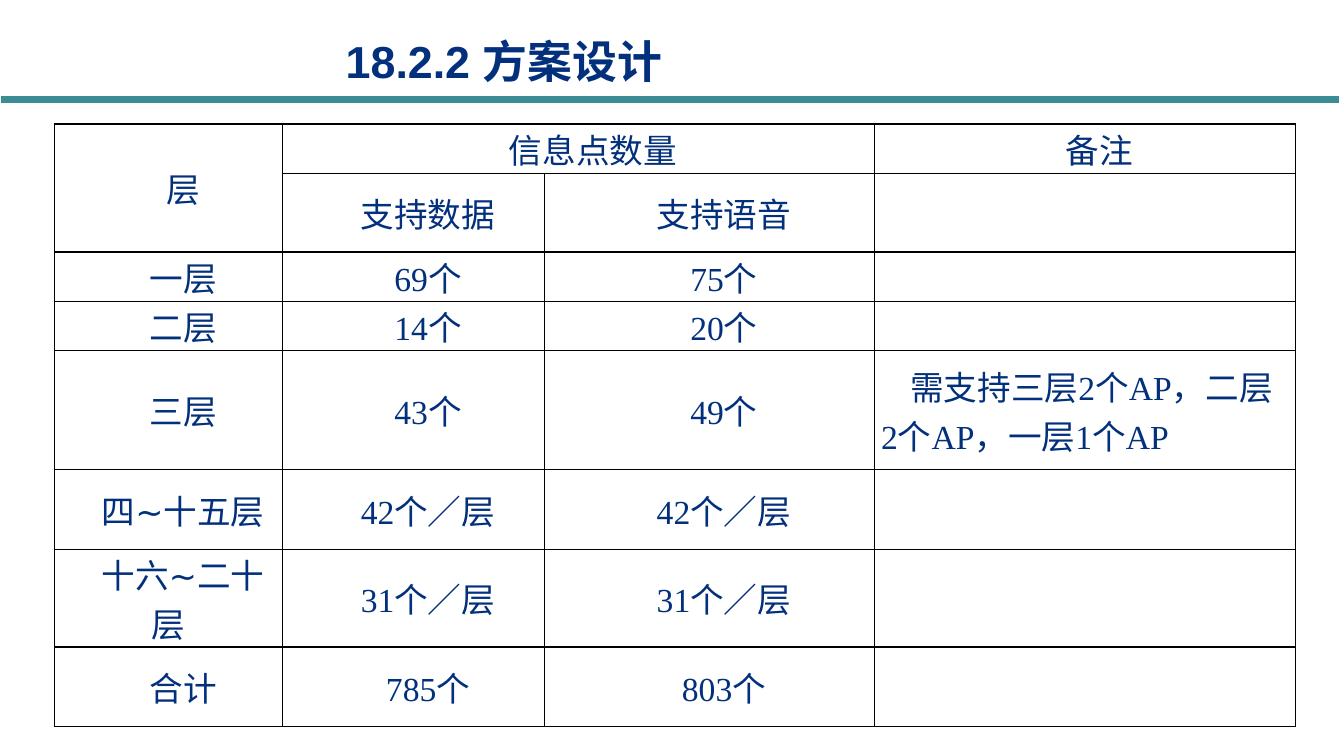
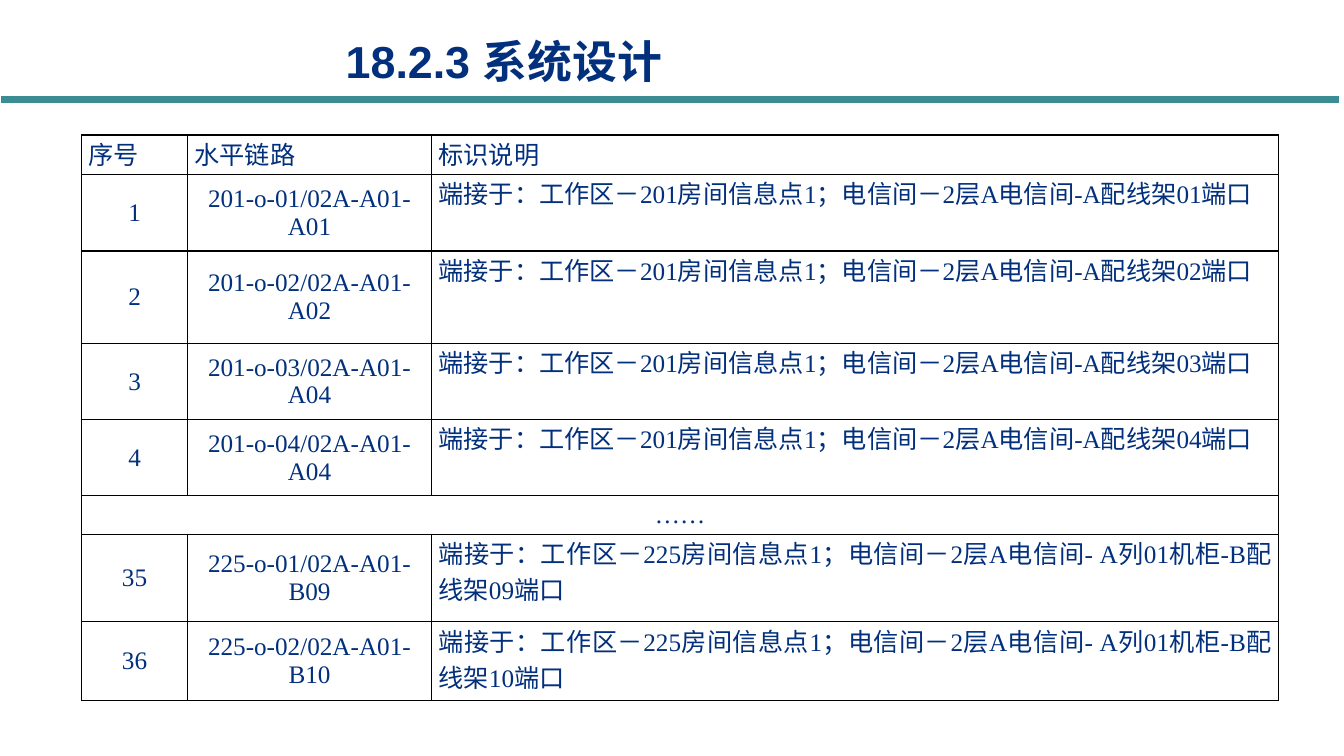
"""Build two cabling design slides, each a titled page with a ruled table."""
from lxml.etree import SubElement
from pptx import Presentation
from pptx.dml.color import RGBColor
from pptx.enum.shapes import MSO_CONNECTOR as CONNECTOR
from pptx.enum.text import MSO_ANCHOR as ANCHOR, PP_ALIGN as ALIGN
from pptx.oxml import parse_xml
from pptx.oxml.ns import nsdecls, qn
from pptx.util import Inches, Pt

COLORS = {"navy": "02307C", "teal": "3C8C93", "black": "000000", "white": "FFFFFF"}
TITLE_FONT, BODY_FONT = "Arial", "Times New Roman"

deck = Presentation()
deck.slide_width, deck.slide_height = Inches(13.33), Inches(7.5)


def add_page(title):
    page = deck.slides.add_slide(deck.slide_layouts[6])
    rule = page.shapes.add_connector(
        CONNECTOR.STRAIGHT, Inches(0.01), Inches(0.99), Inches(13.28), Inches(0.99))
    rule.line.color.rgb = RGBColor.from_string(COLORS["teal"])
    rule.line.width = Pt(4.75)
    SubElement(rule._element.spPr, qn("a:effectLst"))
    box = page.shapes.add_textbox(Inches(3.33), Inches(0.29), Inches(6.35), Inches(0.63))
    box.text_frame.word_wrap = True
    box.text_frame.vertical_anchor = ANCHOR.MIDDLE
    para = box.text_frame.paragraphs[0]
    para.text = title
    para.font.name, para.font.size, para.font.bold = TITLE_FONT, Pt(32), True
    para.font.color.rgb = RGBColor.from_string(COLORS["navy"])
    return page


def add_grid(page, left, top, widths, heights, rows, size):
    frame = page.shapes.add_table(
        len(heights), len(widths), Inches(left), Inches(top),
        Inches(sum(widths)), Inches(sum(heights)))
    table = frame.table
    table.first_row = table.horz_banding = False
    for column, width in zip(table.columns, widths):
        column.width = Inches(width)
    for row, height in zip(table.rows, heights):
        row.height = Inches(height)
    for cell, text in zip(table.iter_cells(), (text for row in rows for text in row)):
        cell.margin_left = cell.margin_right = Inches(0.07)
        cell.margin_top = cell.margin_bottom = 0
        cell.vertical_anchor = ANCHOR.MIDDLE
        for side in ("lnL", "lnR", "lnT", "lnB"):
            cell._tc.get_or_add_tcPr().append(parse_xml(
                f'<a:{side} {nsdecls("a")} w="{Pt(1)}"><a:solidFill>'
                f'<a:srgbClr val="{COLORS["black"]}"/></a:solidFill></a:{side}>'))
        cell.fill.solid()
        cell.fill.fore_color.rgb = RGBColor.from_string(COLORS["white"])
        para = cell.text_frame.paragraphs[0]
        para.text = text
        para.alignment = ALIGN.CENTER
        para.font.name, para.font.size = BODY_FONT, Pt(size)
        para.font.color.rgb = RGBColor.from_string(COLORS["navy"])
    return table


page = add_page("18.2.2 方案设计")
floor_rows = [
    ("层", "信息点数量", "", "备注"),
    ("", "支持数据", "支持语音", ""),
    ("一层", "69个", "75个", ""),
    ("二层", "14个", "20个", ""),
    ("三层", "43个", "49个", "需支持三层2个AP，二层2个AP，一层1个AP"),
    ("四∼十五层", "42个／层", "42个／层", ""),
    ("十六∼二十层", "31个／层", "31个／层", ""),
    ("合计", "785个", "803个", ""),
]
floors = add_grid(page, 0.54, 1.23, [2.26, 2.6, 3.27, 4.18],
                  [0.49, 0.78, 0.49, 0.49, 1.18, 0.79, 0.97, 0.79], floor_rows, 24)
floors.cell(0, 0).merge(floors.cell(1, 0))
floors.cell(0, 1).merge(floors.cell(0, 2))
for cell in floors.iter_cells():
    para = cell.text_frame.paragraphs[0]
    para.space_before = Pt(5)
    para._p.get_or_add_pPr().set("indent", str(Inches(0.29)))
floors.cell(4, 3).text_frame.paragraphs[0].alignment = ALIGN.LEFT

page = add_page("18.2.3 系统设计")
links = [
    ("1", "201-o-01/02A-A01-A01", "201", "A配线架01"),
    ("2", "201-o-02/02A-A01-A02", "201", "A配线架02"),
    ("3", "201-o-03/02A-A01-A04", "201", "A配线架03"),
    ("4", "201-o-04/02A-A01-A04", "201", "A配线架04"),
    ("35", "225-o-01/02A-A01-B09", "225", " A列01机柜-B配线架09"),
    ("36", "225-o-02/02A-A01-B10", "225", " A列01机柜-B配线架10"),
]
link_rows = [("序号", "水平链路", "标识说明")]
for number, link, room, port in links:
    link_rows.append(
        (number, link, f"端接于：工作区－{room}房间信息点1；电信间－2层A电信间-{port}端口"))
link_rows.insert(5, ("……", "", ""))
labels = add_grid(page, 0.81, 1.34, [1.05, 2.42, 8.4],
                  [0.39, 0.76, 0.92, 0.75, 0.76, 0.38, 0.87, 0.78], link_rows, 18)
labels.cell(5, 0).merge(labels.cell(5, 2))
for row in range(len(link_rows)):
    for column in range(3):
        if row == 0 or column == 2:
            cell = labels.cell(row, column)
            cell.vertical_anchor = ANCHOR.TOP
            cell.text_frame.paragraphs[0].alignment = ALIGN.JUSTIFY

deck.save("out.pptx")
